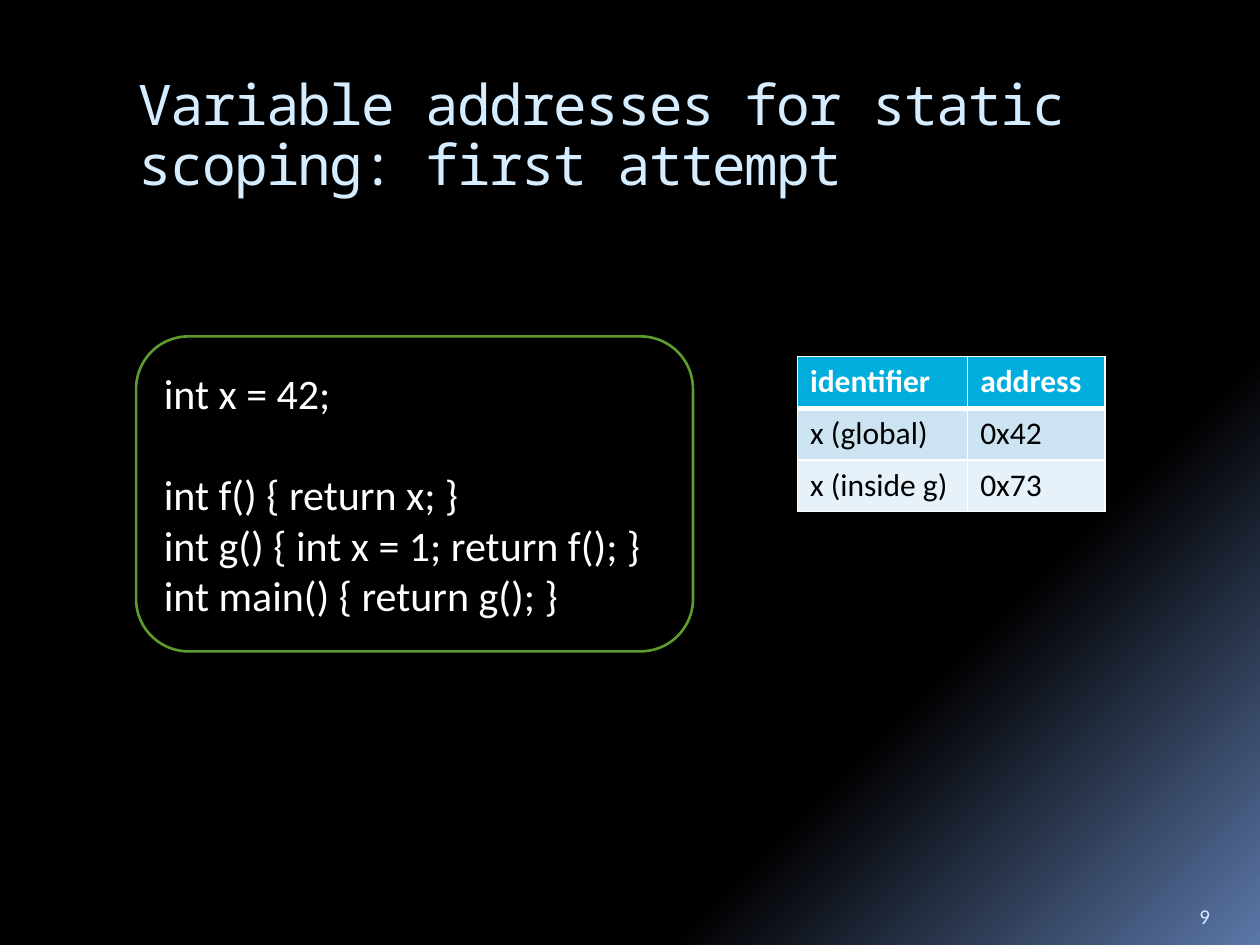
from lxml.etree import SubElement
from pptx import Presentation
from pptx.dml.color import RGBColor
from pptx.enum.shapes import MSO_SHAPE
from pptx.enum.text import MSO_ANCHOR, PP_ALIGN
from pptx.oxml.ns import qn
from pptx.util import Inches, Pt

COLORS = {
    "night": "000000", "glow": "5B77A8", "title": "D6ECFF", "white": "FFFFFF",
    "black": "000000", "frame": "5E9B2C", "header": "00ADDC",
    "band_dark": "CCE3F2", "band_light": "E7F1F9",
}
FORMATS = {
    "title": {"name": "Noto Sans Mono", "size": Pt(32)},
    "number": {"name": "Calibri", "size": Pt(12)},
    "code": {"name": "Calibri", "size": Pt(24)},
    "header": {"name": "Calibri", "size": Pt(18), "bold": True},
    "body": {"name": "Calibri", "size": Pt(18), "bold": False},
}
CODE_BLOCKS = [
    ["int x = 42;"],
    ["int f() { return x; }", "int g() { int x = 1; return f(); }",
     "int main() { return g(); }"],
]
ADDRESSES = [("identifier", "address"), ("x (global)", "0x42"), ("x (inside g)", "0x73")]


def rgb(name):
    """Return the named colour."""
    return RGBColor.from_string(COLORS[name])


def add_run(p, text, style, color):
    """Append a formatted run to a paragraph."""
    r = p.add_run()
    r.text = text
    for key, value in FORMATS[style].items():
        setattr(r.font, key, value)
    r.font.color.rgb = rgb(color)
    return r


def add_background(s):
    """Fill the slide with a diagonal glow in the lower right corner."""
    fill = s.background.fill
    fill.gradient()
    fill.gradient_angle = 315
    for stop, position, color in zip(fill.gradient_stops, (0.73, 1), ("night", "glow")):
        stop.position = position
        stop.color.rgb = rgb(color)


def add_text(s, text, style, left, top, width, height, anchor):
    """Place a wrapped single-paragraph text box."""
    tf = s.shapes.add_textbox(*map(Inches, (left, top, width, height))).text_frame
    tf.word_wrap = True
    tf.vertical_anchor = anchor
    p = tf.paragraphs[0]
    return p, add_run(p, text, style, "title")


def add_title(s, text, left, top, width, height):
    """Place the slide title with tightened letters and lines."""
    p, r = add_text(s, text, "title", left, top, width, height, MSO_ANCHOR.TOP)
    p.line_spacing = 0.9
    r.font._element.set("spc", "-100")


def add_code(s, blocks, left, top, width, height):
    """Place the framed code listing with a gap between blocks."""
    sp = s.shapes.add_shape(MSO_SHAPE.ROUNDED_RECTANGLE,
                            *map(Inches, (left, top, width, height)))
    sp.shadow.inherit = False
    sp.fill.background()
    sp.line.color.rgb = rgb("frame")
    sp.line.width = Pt(1.5)
    tf = sp.text_frame
    tf.word_wrap = True
    tf.vertical_anchor = MSO_ANCHOR.MIDDLE
    p = tf.paragraphs[0]
    for b, block in enumerate(blocks):
        for i, line in enumerate(block):
            if b or i:
                p = tf.add_paragraph()
            if b and not i:
                p.space_before = Pt(29)
            p.alignment = PP_ALIGN.LEFT
            add_run(p, line, "code", "white")


def set_borders(cell, widths):
    """Draw white cell borders, given widths in points by side."""
    tc_pr = cell._tc.get_or_add_tcPr()
    for i, (side, width) in enumerate(widths.items()):
        ln = SubElement(tc_pr, qn(f"a:ln{side}"), w=str(Pt(width)))
        fill = SubElement(ln, qn("a:solidFill"))
        SubElement(fill, qn("a:srgbClr"), val=COLORS["white"])
        tc_pr.insert(i, ln)


def add_addresses(s, rows, left, top, col_widths, row_height):
    """Place the banded table of variable addresses."""
    table = s.shapes.add_table(
        len(rows), len(col_widths), Inches(left), Inches(top),
        Inches(sum(col_widths)), Inches(row_height * len(rows))).table
    for column, width in zip(table.columns, col_widths):
        column.width = Inches(width)
    fills = ("header", "band_dark", "band_light")
    for i, row in enumerate(rows):
        table.rows[i].height = Inches(row_height)
        style, color = ("body", "black") if i else ("header", "white")
        for j, text in enumerate(row):
            cell = table.cell(i, j)
            add_run(cell.text_frame.paragraphs[0], text, style, color)
            cell.fill.solid()
            cell.fill.fore_color.rgb = rgb(fills[i])
            set_borders(cell, {"L": 1, "R": 1, "T": 3 if i == 1 else 1,
                               "B": 1 if i else 3})


def main():
    """Build and save the slide."""
    prs = Presentation()
    prs.slide_width, prs.slide_height = Inches(10), Inches(7.5)
    s = prs.slides.add_slide(prs.slide_layouts[6])
    add_background(s)
    add_title(s, "Variable addresses for static scoping: first attempt", 1, 0.56, 8.5, 1)
    add_text(s, "9", "number", 9.42, 7.02, 0.5, 0.4, MSO_ANCHOR.BOTTOM)
    add_code(s, CODE_BLOCKS, 1.08, 2.67, 4.42, 2.5)
    add_addresses(s, ADDRESSES, 6.33, 2.83, (1.35, 1.09), 0.41)
    prs.save("out.pptx")


if __name__ == "__main__":
    main()
